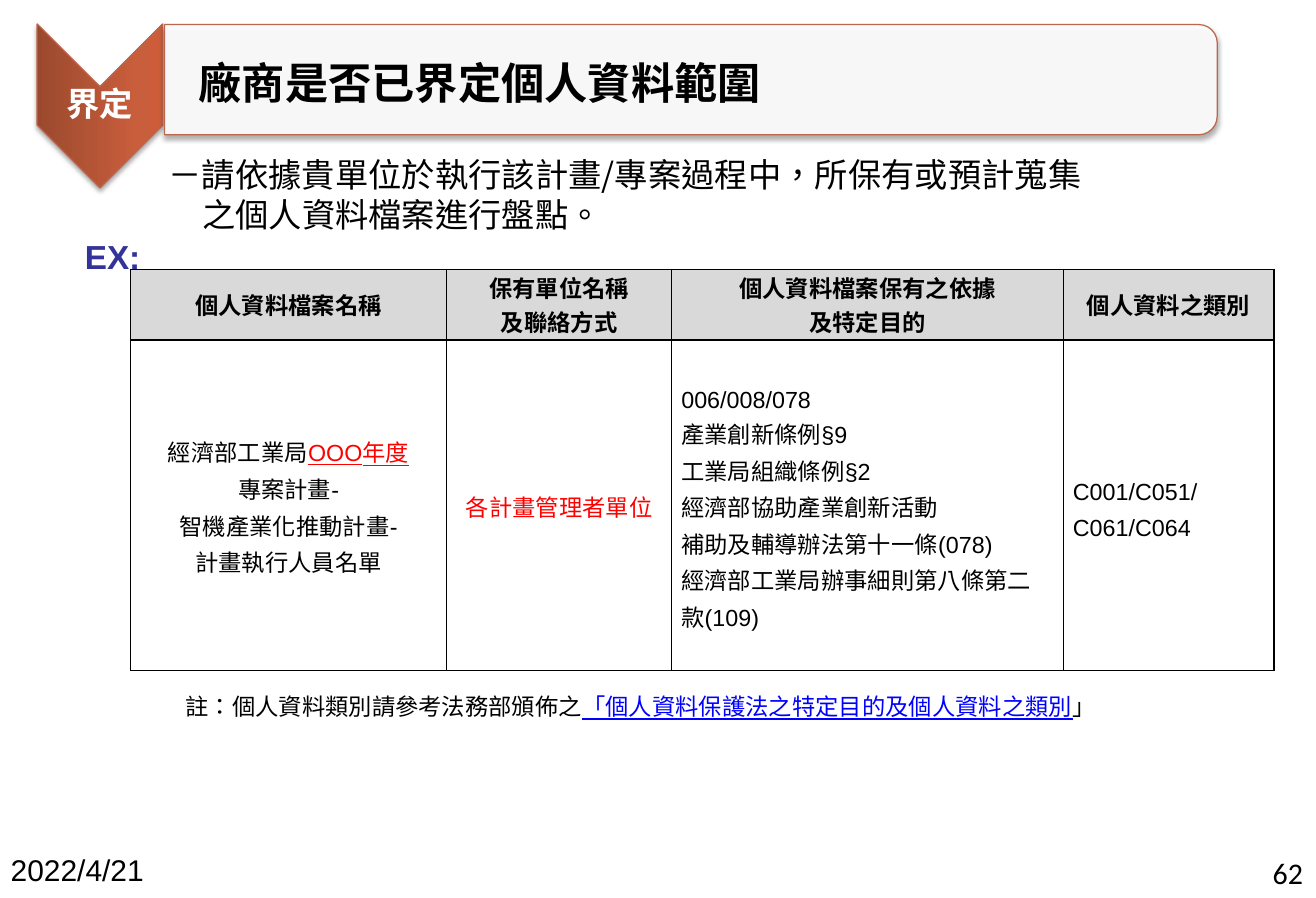
from lxml.etree import SubElement
from pptx import Presentation
from pptx.dml.color import RGBColor
from pptx.enum.lang import MSO_LANGUAGE_ID
from pptx.enum.shapes import MSO_SHAPE
from pptx.enum.text import MSO_ANCHOR, PP_ALIGN
from pptx.oxml import parse_xml
from pptx.oxml.ns import nsdecls, qn
from pptx.util import Inches, Pt

CJK = "Noto Sans CJK SC"
BLACK, RED, BLUE, NAVY, WHITE = "000000", "FF0000", "0000FF", "333399", "FFFFFF"
GREY, RUST = "D9D9D9", "BE664B"
LEFT, CENTER, RIGHT, JUSTIFY = PP_ALIGN.LEFT, PP_ALIGN.CENTER, PP_ALIGN.RIGHT, PP_ALIGN.JUSTIFY

STEP = "界定"
TITLE = "廠商是否已界定個人資料範圍"
INTRO = ["－請依據貴單位於執行該計畫/專案過程中，所保有或預計蒐集", "之個人資料檔案進行盤點。"]
NOTE = [("註：個人資料類別請參考法務部頒佈之", BLACK, False),
        ("「個人資料保護法之特定目的及個人資料之類別", BLUE, True),
        ("」", BLACK, False)]
DATE, PAGE = "2022/4/21", "62"

COLUMNS = [2.64, 1.88, 3.27, 1.76]
ROWS = [0.59, 2.76]
HEADER = [["個人資料檔案名稱"], ["保有單位名稱", "及聯絡方式"],
          ["個人資料檔案保有之依據", "及特定目的"], ["個人資料之類別"]]
BODY = [
    [[("經濟部工業局", BLACK, False), ("OOO年度", RED, True)],
     "專案計畫-", "智機產業化推動計畫-", "計畫執行人員名單"],
    [[("各計畫管理者單位", RED, False)]],
    ["006/008/078", "產業創新條例§9", "工業局組織條例§2", "經濟部協助產業創新活動",
     "補助及輔導辦法第十一條(078)", "經濟部工業局辦事細則第八條第二款(109)"],
    ["C001/C051/", "C061/C064"],
]
BODY_ALIGN = [CENTER, CENTER, LEFT, JUSTIFY]
GRADIENT = [(0, "9B492E"), (80, "C95E3C"), (100, "CD5D3A")]


def rgb(value):
    return RGBColor.from_string(value)


def add_runs(p, content, size, font, color=BLACK, bold=False):
    runs = [(content, color, False)] if isinstance(content, str) else content
    for text, run_color, underline in runs:
        r = p.add_run()
        r.text = text
        f = r.font
        f.size, f.name, f.bold = Pt(size), font, bold
        f.underline = underline
        f.color.rgb = rgb(run_color)
        f.language_id = MSO_LANGUAGE_ID.TRADITIONAL_CHINESE
        latin = f._element.find(qn("a:latin"))
        latin.addnext(parse_xml(f'<a:ea {nsdecls("a")} typeface="{CJK}"/>'))


def fill_text(tf, lines, size, font, color=BLACK, bold=False, align=LEFT, spacing=None):
    for i, line in enumerate(lines):
        p = tf.paragraphs[0] if i == 0 else tf.add_paragraph()
        p.alignment = align
        if spacing:
            p.line_spacing = spacing
        add_runs(p, line, size, font, color, bold)


def add_text(s, box, lines, size, font, wrap=True, **style):
    tf = s.shapes.add_textbox(*map(Inches, box)).text_frame
    tf.word_wrap = wrap
    fill_text(tf, lines, size, font, **style)
    return tf


def indent(p, margin, first=0):
    pPr = p._p.get_or_add_pPr()
    pPr.set("marL", str(Inches(margin)))
    pPr.set("indent", str(Inches(first)))


def add_banner_shape(s, kind, box):
    sp = s.shapes.add_shape(kind, *map(Inches, box))
    sp.rotation = 90
    sp.fill.solid()
    sp.fill.fore_color.rgb = rgb(WHITE)
    sp.line.color.rgb = rgb(RUST)
    sp.line.width = Pt(0.75)
    sp.shadow.inherit = False
    effects = sp._element.spPr.find(qn("a:effectLst"))
    effects.append(parse_xml(
        f'<a:outerShdw {nsdecls("a")} blurRad="{Pt(3.1)}" dist="{Pt(1.8)}" dir="5400000" '
        'rotWithShape="0"><a:srgbClr val="000000"><a:alpha val="35000"/></a:srgbClr></a:outerShdw>'))
    return sp


def add_borders(cell):
    tcPr = cell._tc.get_or_add_tcPr()
    for side in ("lnL", "lnR", "lnT", "lnB"):
        ln = SubElement(tcPr, qn(f"a:{side}"), w=str(Pt(1)))
        SubElement(SubElement(ln, qn("a:solidFill")), qn("a:srgbClr"), val=BLACK)


def fill_cell(cell, lines, align, spacing, bold=False, color=None):
    add_borders(cell)
    if color:
        cell.fill.solid()
        cell.fill.fore_color.rgb = rgb(color)
    else:
        cell.fill.background()
    cell.vertical_anchor = MSO_ANCHOR.MIDDLE
    cell.margin_left = cell.margin_right = Inches(0.08)
    cell.margin_top = cell.margin_bottom = 0
    fill_text(cell.text_frame, lines, 14, "Arial", bold=bold, align=align, spacing=Pt(spacing))


def add_inventory(s):
    table = s.shapes.add_table(len(ROWS), len(COLUMNS), Inches(1.09), Inches(2.25),
                               Inches(sum(COLUMNS)), Inches(sum(ROWS))).table
    for row, height in zip(table.rows, ROWS):
        row.height = Inches(height)
    for i, width in enumerate(COLUMNS):
        table.columns[i].width = Inches(width)
        fill_cell(table.cell(0, i), HEADER[i], CENTER, 20, True, GREY)
        fill_cell(table.cell(1, i), BODY[i], BODY_ALIGN[i], 22)


def add_banner(s):
    chevron = add_banner_shape(s, MSO_SHAPE.CHEVRON, (0.15, 0.36, 1.37, 1.05))
    stops = "".join(f'<a:gs pos="{pos * 1000}"><a:srgbClr val="{color}"/></a:gs>'
                    for pos, color in GRADIENT)
    spPr = chevron._element.spPr
    spPr.replace(spPr.find(qn("a:solidFill")), parse_xml(
        f'<a:gradFill {nsdecls("a")} rotWithShape="1"><a:gsLst>{stops}</a:gsLst>'
        '<a:lin ang="16200000" scaled="0"/></a:gradFill>'))
    tf = add_text(s, (0.31, 0.68, 1.05, 0.41), [STEP], 20, CJK,
                  color=WHITE, bold=True, align=CENTER, spacing=0.9)
    tf.vertical_anchor = MSO_ANCHOR.MIDDLE
    tf.margin_left = tf.margin_right = tf.margin_top = tf.margin_bottom = Inches(0.01)

    panel = add_banner_shape(s, MSO_SHAPE.ROUND_2_SAME_RECTANGLE, (5.31, -3.73, 0.92, 8.79))
    white = panel._element.spPr.find(qn("a:solidFill"))[0]
    SubElement(white, qn("a:alpha"), val="90000")
    tf = add_text(s, (1.54, 0.42, 4.97, 0.54), [TITLE], 26, CJK, wrap=False, bold=True)
    indent(tf.paragraphs[0], 0, 0.02)


def main():
    prs = Presentation()
    prs.slide_width, prs.slide_height = Inches(10.99), Inches(7.5)
    s = prs.slides.add_slide(prs.slide_layouts[6])

    add_text(s, (8.87, 7.09, 2.11, 0.41), [PAGE], 18, "Calibri", align=RIGHT)
    tf = add_text(s, (0.09, 1.82, 9.7, 3.93), ["EX:"], 20, "Arial",
                  color=NAVY, bold=True, spacing=1.3)
    indent(tf.paragraphs[0], 0.5, 0.02)
    add_text(s, (-0.01, 7.06, 2.11, 0.41), [DATE], 18, "Arial")
    add_text(s, (1.45, 5.73, 8.55, 0.34), [NOTE], 14, "Times New Roman")
    add_banner(s)
    tf = add_text(s, (1.31, 1.24, 8.66, 0.77), INTRO, 20, CJK)
    indent(tf.paragraphs[1], 0.28)
    add_inventory(s)
    prs.save("out.pptx")


if __name__ == "__main__":
    main()
